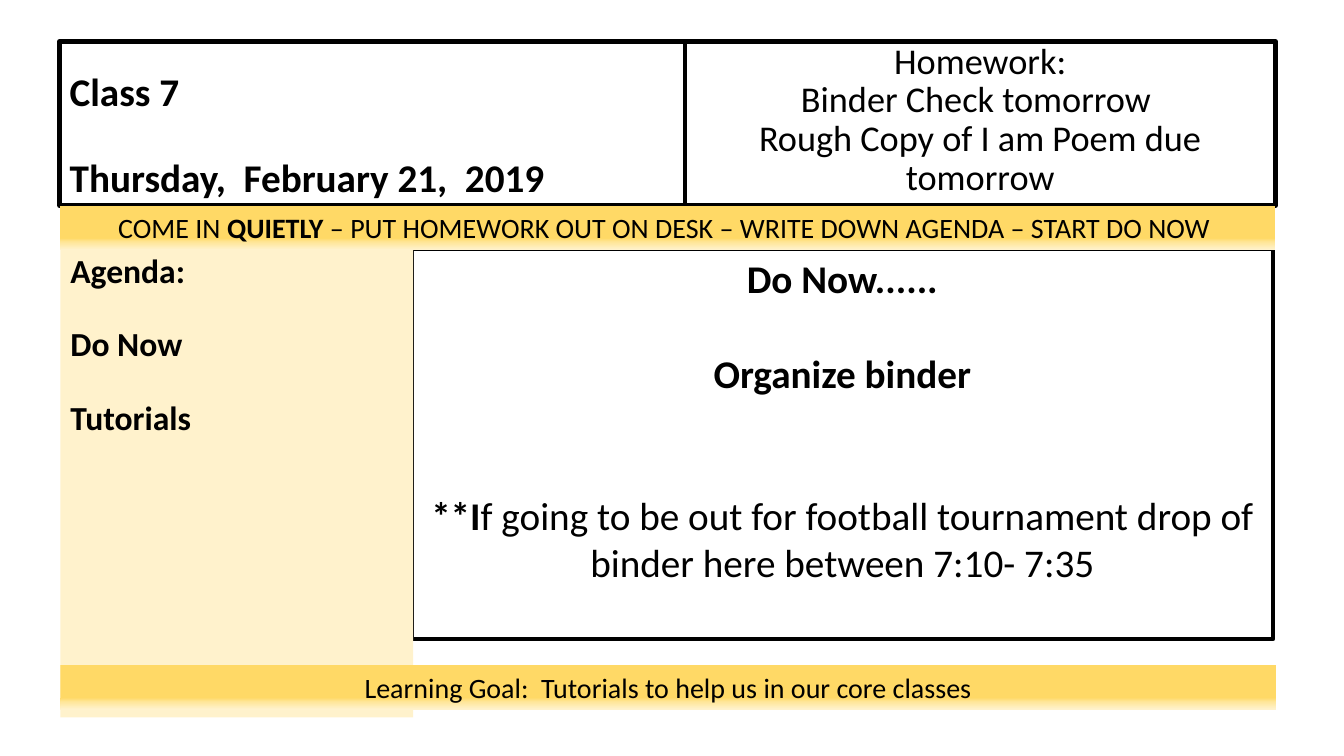
from lxml.etree import SubElement
from pptx import Presentation
from pptx.dml.color import RGBColor
from pptx.enum.shapes import MSO_SHAPE
from pptx.enum.text import MSO_ANCHOR, PP_ALIGN
from pptx.oxml.ns import qn
from pptx.util import Pt

COLORS = {"ink": "000000", "gold": "FFD966", "light": "FFE699", "cream": "FFF2CC"}
BAND_STOPS = [(0, "gold"), (74, "gold"), (83, "light"), (100, "cream")]
FONT = "Calibri"
LINE_HEIGHT = 1.22

TITLE = ["Class 7", "Thursday,  February 21,  2019"]
HOMEWORK = ["Homework:", "Binder Check tomorrow ", "Rough Copy of I am Poem due tomorrow"]
DO_NOW = [
    "Do Now......",
    "Organize binder",
    [("**I", True),
     ("f going to be out for football tournament drop of binder here between 7:10- 7:35", False)],
]
ROUTINE = [[
    ("COME IN ", False),
    ("QUIETLY", True),
    (" – PUT HOMEWORK OUT ON DESK – WRITE DOWN AGENDA – START DO NOW ", False),
]]
AGENDA = ["Agenda:", "Do Now", "Tutorials"]
GOAL = ["Learning Goal:  Tutorials to help us in our core classes"]

LEFT, TOP, WIDTH = 42.7, 29.5, 868.3
HEADER_H, BAND_H, TITLE_W, AGENDA_W = 117.4, 31.5, 446.6, 252
BAND_TOP = TOP + HEADER_H
BODY_TOP = BAND_TOP + BAND_H
GOAL_TOP = 475.2


def add_text(sp, paras, size, bold=False, align=PP_ALIGN.CENTER, spacing=(1,), skips=(0,),
             anchor=MSO_ANCHOR.TOP):
    tf = sp.text_frame
    tf.word_wrap = True
    tf.vertical_anchor = anchor
    for i, para in enumerate(paras):
        p = tf.paragraphs[0] if i == 0 else tf.add_paragraph()
        p.alignment = align
        p.line_spacing = spacing[min(i, len(spacing) - 1)]
        if i:
            skip = skips[min(i, len(skips)) - 1]
            p.space_before = Pt(round(skip * size * LINE_HEIGHT * p.line_spacing, 2))
        for text, heavy in [(para, bold)] if isinstance(para, str) else para:
            r = p.add_run()
            r.text = text
            r.font.name, r.font.size, r.font.bold = FONT, Pt(size), heavy
            r.font.color.rgb = RGBColor.from_string(COLORS["ink"])


def add_box(s, x, y, w, h, fill=None, line=False):
    sp = s.shapes.add_shape(MSO_SHAPE.RECTANGLE, Pt(x), Pt(y), Pt(w), Pt(h))
    sp.shadow.inherit = False
    if fill:
        sp.fill.solid()
        sp.fill.fore_color.rgb = RGBColor.from_string(COLORS[fill])
    else:
        sp.fill.background()
    if line:
        sp.line.color.rgb = RGBColor.from_string(COLORS["ink"])
        sp.line.width = Pt(3.25)
    else:
        sp.line.fill.background()
    return sp


def add_band(s, x, y, paras):
    sp = add_box(s, x, y, WIDTH, BAND_H)
    sp.fill.gradient()
    sp.fill.gradient_angle = 270
    stops = sp._element.spPr.find(qn("a:gradFill")).find(qn("a:gsLst"))
    for gs in list(stops):
        stops.remove(gs)
    for pos, name in BAND_STOPS:
        gs = SubElement(stops, qn("a:gs"), pos=str(pos * 1000))
        SubElement(gs, qn("a:srgbClr"), val=COLORS[name])
    add_text(sp, paras, 20)


def main():
    prs = Presentation()
    prs.slide_width, prs.slide_height = Pt(960), Pt(540)
    s = prs.slides.add_slide(prs.slide_layouts[6])

    title = add_box(s, LEFT, TOP, TITLE_W, HEADER_H, line=True)
    add_text(title, TITLE, 28, bold=True, align=PP_ALIGN.LEFT, spacing=(0.9,), skips=(1,),
             anchor=MSO_ANCHOR.BOTTOM)

    homework = add_box(s, LEFT + TITLE_W, TOP, WIDTH - TITLE_W, HEADER_H, line=True)
    add_text(homework, HOMEWORK, 25.9, spacing=(0.8, 0.9))

    do_now = add_box(s, 293.8, BODY_TOP - 0.5, 615.6, 278.6, line=True)
    add_text(do_now, DO_NOW, 28, bold=True, skips=(1, 2))

    add_band(s, LEFT, BAND_TOP, ROUTINE)

    agenda = add_box(s, LEFT + 0.5, BODY_TOP, AGENDA_W, 334.1, fill="cream")
    add_text(agenda, AGENDA, 24, bold=True, align=PP_ALIGN.LEFT, spacing=(0.9,), skips=(1,))

    add_band(s, LEFT + 0.5, GOAL_TOP, GOAL)
    prs.save("out.pptx")


if __name__ == "__main__":
    main()
